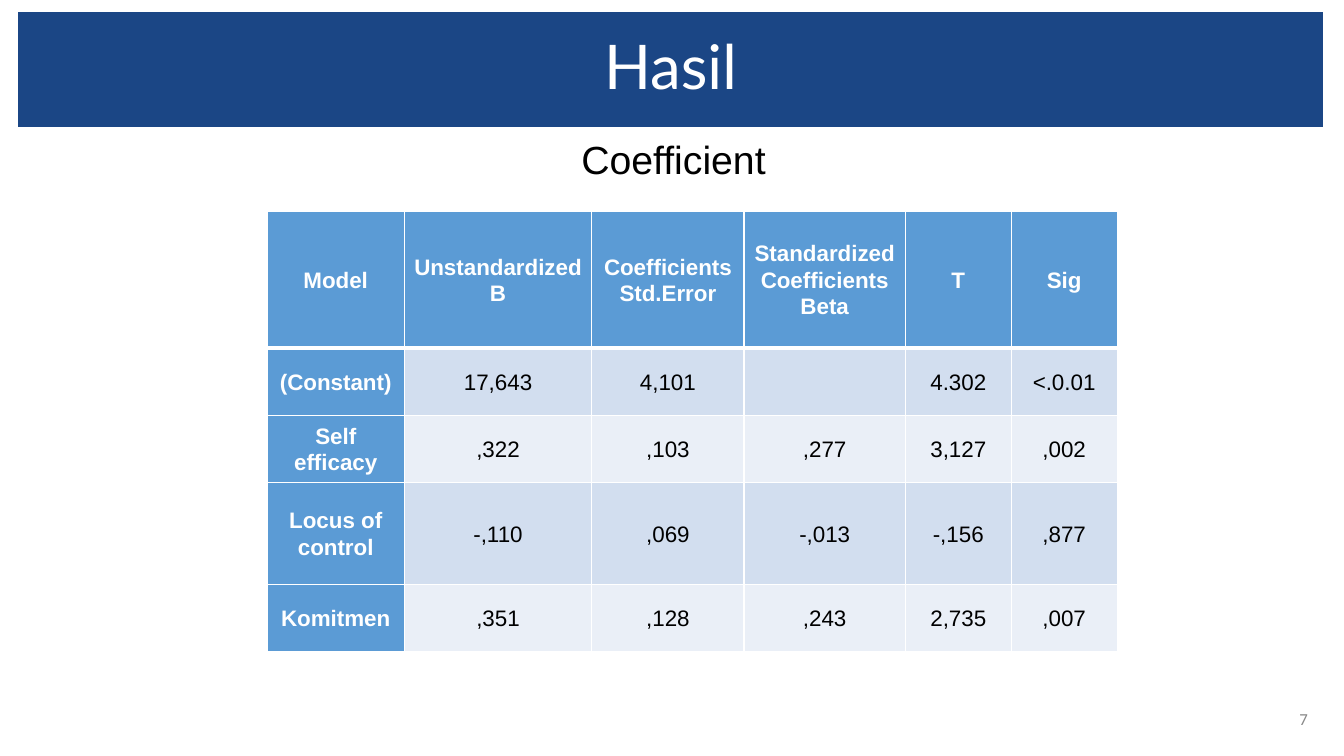
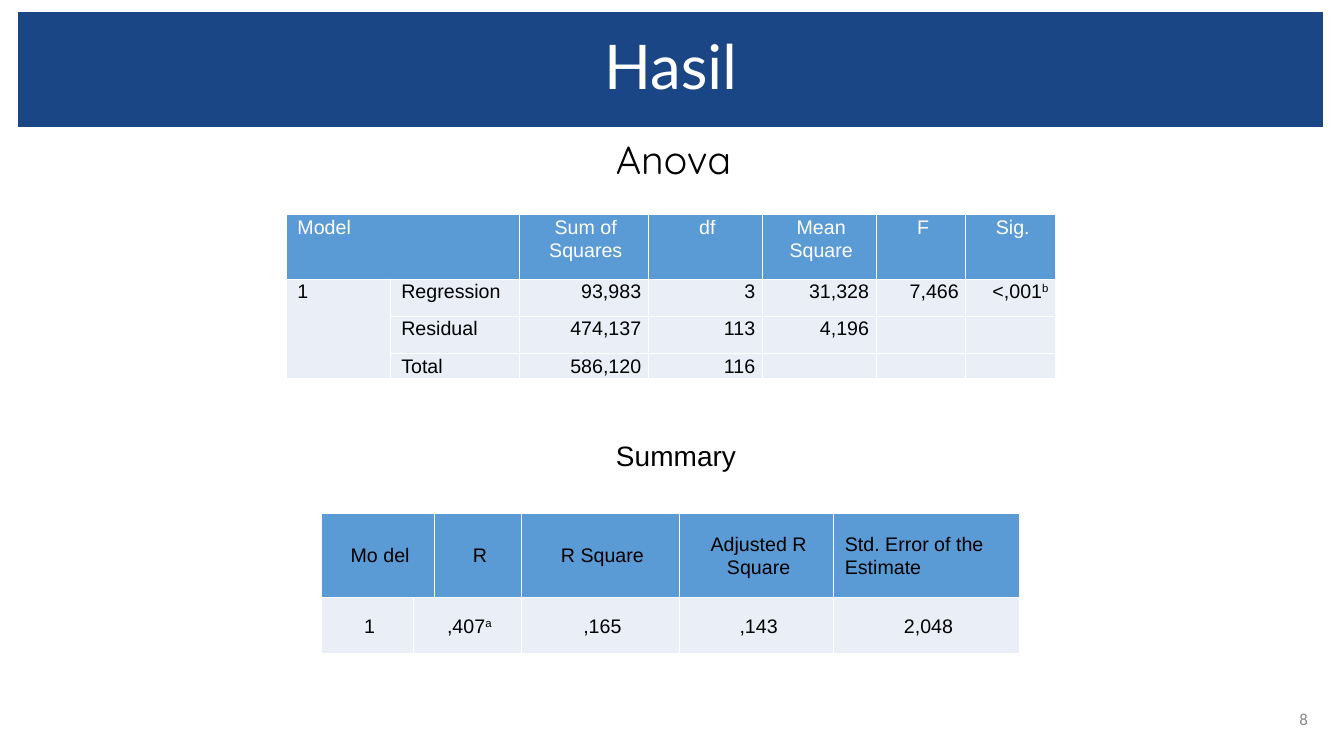
from lxml import etree
from pptx import Presentation
from pptx.dml.color import RGBColor
from pptx.enum.shapes import MSO_SHAPE
from pptx.enum.text import MSO_ANCHOR, PP_ALIGN
from pptx.oxml.ns import qn
from pptx.util import Inches, Pt

RECTANGLE = MSO_SHAPE.RECTANGLE
TOP, MIDDLE = MSO_ANCHOR.TOP, MSO_ANCHOR.MIDDLE
ALIGN = {"l": PP_ALIGN.LEFT, "c": PP_ALIGN.CENTER, "r": PP_ALIGN.RIGHT}

COLORS = {
    "band": "1B4685",
    "header": "5B9BD5",
    "dark_row": "D2DEEF",
    "light_row": "EAEFF7",
    "white": "FFFFFF",
    "black": "000000",
    "number": "888888",
}

# Shared places and text styles
TITLE_AREA = (0.18, 0.12, 12.94, 1.14)
SUBTITLE_AREA = (0.18, 1.35, 12.94, 5.57)
NUMBER_AREA = (12.5, 6.93, 0.57, 0.4)
TITLE = {"name": "Lato", "size": Pt(44), "color": "white"}
SUBTITLE = {"name": "Arial", "size": Pt(28), "color": "black"}
CAPTION = {"name": "Arial", "size": Pt(20), "color": "black"}
NUMBER = {"name": "Calibri", "size": Pt(12), "color": "number"}
LABEL_16 = {"name": "Arial", "size": Pt(16), "color": "white", "bold": True}
VALUE_16 = {"name": "Arial", "size": Pt(16), "color": "black", "bold": False}
LABEL_14 = {"name": "Arial", "size": Pt(14), "color": "white"}
VALUE_14 = {"name": "Arial", "size": Pt(14), "color": "black"}

CELL_PARAGRAPH = {"line_spacing": 1.07, "space_after": Pt(8)}
CELL_MARGINS = {
    "margin_left": Inches(0.07), "margin_right": Inches(0.07),
    "margin_top": 0, "margin_bottom": 0,
}


def rgb(name):
    return RGBColor.from_string(COLORS[name])


def set_all(target, values):
    for name, value in values.items():
        setattr(target, name, value)


def add_span(para, text, style):
    span = para.add_run()
    span.text = text
    for name, value in style.items():
        if name == "color":
            span.font.color.rgb = rgb(value)
        else:
            setattr(span.font, name, value)
    return span


def write(para, text, style, align="c", indent=0, **values):
    """Write one paragraph; what follows a ^ is superscript."""
    set_all(para, {"alignment": ALIGN[align], **values})
    if indent:
        para._p.get_or_add_pPr().set("marL", str(Inches(indent)))
    base, _, raised = text.partition("^")
    if base:
        add_span(para, base, style)
    else:
        etree.SubElement(para._p, qn("a:endParaRPr"), sz=str(int(style["size"].pt * 100)))
    if raised:
        span = add_span(para, raised, style)
        span._r.get_or_add_rPr().set("baseline", "30000")


def add_text(page, area, text, style, anchor=TOP, **values):
    box = page.shapes.add_textbox(*map(Inches, area))
    set_all(box.text_frame, {"word_wrap": True, "vertical_anchor": anchor})
    write(box.text_frame.paragraphs[0], text, style, **values)


def add_title(page, text):
    band = page.shapes.add_shape(RECTANGLE, *map(Inches, TITLE_AREA))
    band.shadow.inherit = False
    band.fill.solid()
    band.fill.fore_color.rgb = rgb("band")
    band.line.fill.background()
    set_all(band.text_frame, {"word_wrap": True, "vertical_anchor": MIDDLE})
    write(band.text_frame.paragraphs[0], text, TITLE, line_spacing=0.9)


def add_page(deck, number, subtitle, font="Arial"):
    page = deck.slides.add_slide(deck.slide_layouts[6])
    add_text(page, NUMBER_AREA, str(number), NUMBER, MIDDLE, align="r")
    add_title(page, "Hasil")
    add_text(page, SUBTITLE_AREA, subtitle, {**SUBTITLE, "name": font},
             indent=0.06, line_spacing=0.9)
    return page


def set_borders(cell, top=1, bottom=1):
    properties = cell._tc.get_or_add_tcPr()
    for side, width in (("L", 1), ("R", 1), ("T", top), ("B", bottom)):
        line = etree.SubElement(properties, qn(f"a:ln{side}"), w=str(Pt(width)))
        fill = etree.SubElement(line, qn("a:solidFill"))
        etree.SubElement(fill, qn("a:srgbClr"), val=COLORS["white"])


def add_grid(page, left, top, widths, heights, rows, look, merges=(),
             anchor=MIDDLE, indent=0, rule=1):
    """Add a table; look(row, column) gives fill, text style and alignment."""
    frame = page.shapes.add_table(len(rows), len(widths), Inches(left), Inches(top),
                                  Inches(sum(widths)), Inches(sum(heights)))
    table = frame.table
    set_all(table, {"first_row": False, "horz_banding": False})
    for column, width in zip(table.columns, widths):
        column.width = Inches(width)
    for row, height in zip(table.rows, heights):
        row.height = Inches(height)
    for r, texts in enumerate(rows):
        for c, text in enumerate(texts):
            cell = table.cell(r, c)
            fill, style, align = look(r, c)
            set_borders(cell, top=rule if r == 1 else 1, bottom=rule if r == 0 else 1)
            cell.fill.solid()
            cell.fill.fore_color.rgb = rgb(fill)
            set_all(cell, {**CELL_MARGINS, "vertical_anchor": anchor})
            write(cell.text_frame.paragraphs[0], text, style, align, indent,
                  **CELL_PARAGRAPH)
    for first, last in merges:
        table.cell(*first).merge(table.cell(*last))


# Looks of the three tables
def coefficient_look(row, column):
    if row == 0 or column == 0:
        return "header", LABEL_16, "c"
    return ("dark_row" if row % 2 else "light_row"), VALUE_16, "c"


def anova_look(row, column):
    if row == 0:
        return "header", LABEL_14, "l" if column == 0 else "c"
    return "light_row", VALUE_14, "l" if column < 2 else "r"


def summary_look(row, column):
    if row == 0:
        return "header", VALUE_14, "l" if column == 5 else "c"
    return "light_row", VALUE_14, "c"


# Table contents
COEFFICIENTS = [
    ["Model", "Unstandardized B", "Coefficients Std.Error",
     "Standardized Coefficients Beta", "T", "Sig"],
    ["(Constant)", "17,643", "4,101", "", "4.302", "<.0.01"],
    ["Self efficacy", ",322", ",103", ",277", "3,127", ",002"],
    ["Locus of control", "-,110", ",069", "-,013", "-,156", ",877"],
    ["Komitmen", ",351", ",128", ",243", "2,735", ",007"],
]
ANOVA = [
    ["Model", "", "Sum of Squares", "df", "Mean Square", "F", "Sig."],
    ["1", "Regression", "93,983", "3", "31,328", "7,466", "<,001^b"],
    ["", "Residual", "474,137", "113", "4,196", "", ""],
    ["", "Total", "586,120", "116", "", "", ""],
]
SUMMARY = [
    ["Mo del", "", "R", "R Square", "Adjusted R Square", "Std. Error of the Estimate"],
    ["1", ",407^a", "", ",165", ",143", "2,048"],
]


def main():
    deck = Presentation()
    set_all(deck, {"slide_width": Inches(13.33), "slide_height": Inches(7.5)})

    # Coefficients
    page = add_page(deck, 7, "Coefficient")
    add_grid(page, 2.65, 2.1, [1.36, 1.86, 1.51, 1.6, 1.05, 1.05],
             [1.35, 0.67, 0.67, 1.01, 0.67], COEFFICIENTS, coefficient_look, rule=3)

    # Variance analysis and model summary
    page = add_page(deck, 8, "Anova", "Quicksand")
    add_grid(page, 2.84, 2.13, [1.03, 1.28, 1.28, 1.13, 1.13, 0.89, 0.89],
             [0.64, 0.37, 0.37, 0.19], ANOVA, anova_look,
             [((0, 0), (0, 1)), ((1, 0), (3, 0))], TOP, 0.04)
    add_grid(page, 3.19, 5.09, [0.91, 0.21, 0.86, 1.57, 1.53, 1.84],
             [0.84, 0.55], SUMMARY, summary_look,
             [((0, 0), (0, 1)), ((1, 1), (1, 2))], indent=0.04)
    add_text(page, (5.72, 4.3, 1.97, 0.44), "Summary", CAPTION)

    deck.save("out.pptx")


if __name__ == "__main__":
    main()
